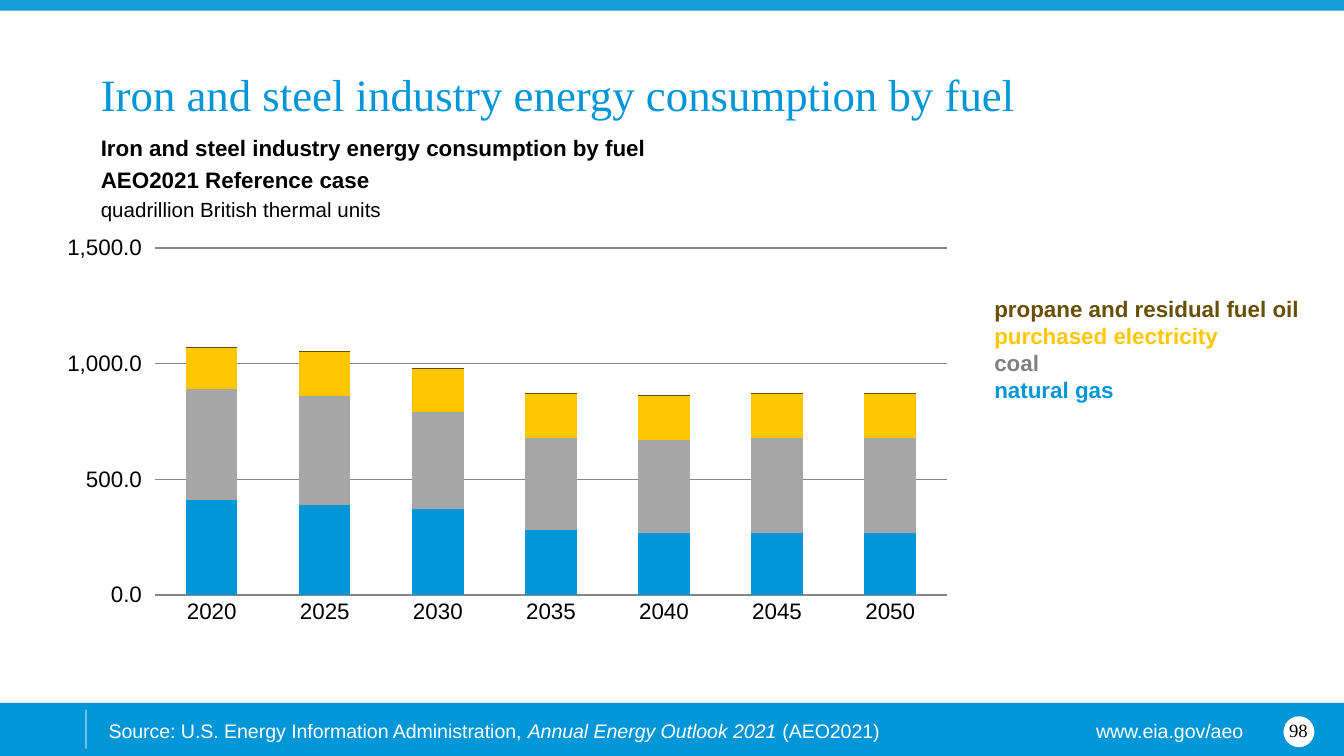
import pptx
import pptx.chart.data
import pptx.dml.color
import pptx.enum.chart
import pptx.enum.shapes
import pptx.enum.text
import pptx.oxml
import pptx.oxml.ns
import pptx.util
from pptx.util import Inches

BLUE, WHITE, BLACK = "0096D7", "FFFFFF", "000000"
GOLD, BROWN = "FFC702", "675005"
SANS, SERIF = "Arial", "Times New Roman"
ALIGN = pptx.enum.text.PP_ALIGN
ANCHOR = pptx.enum.text.MSO_ANCHOR
SHAPE = pptx.enum.shapes.MSO_SHAPE

YEARS = ["2020", "2025", "2030", "2035", "2040", "2045", "2050"]
SERIES = [
    ("Series 1", BLUE, [410, 390, 370, 280, 270, 270, 270]),
    ("Series 2", "BD732A", [0] * 7),
    ("Series 3", "A6A6A6", [480, 470, 420, 400, 400, 410, 410]),
    ("Series 4", GOLD, [180, 190, 190, 190, 190, 190, 190]),
    ("Series 5", BROWN, [3] * 7),
]


def rgb(color):
    return pptx.dml.color.RGBColor.from_string(color)


def set_font(font, size, color, name=SANS, bold=False, italic=False):
    font.size = pptx.util.Pt(size)
    font.name = name
    font.color.rgb = rgb(color)
    font.bold = bold
    font.italic = italic


def add_filled(slide, kind, left, top, width, height, color):
    shape = slide.shapes.add_shape(
        kind, Inches(left), Inches(top), Inches(width), Inches(height))
    shape.shadow.inherit = False
    shape.fill.solid()
    shape.fill.fore_color.rgb = rgb(color)
    shape.line.fill.background()


def add_text(slide, left, top, width, height, paragraphs, align=ALIGN.LEFT,
             anchor=ANCHOR.TOP, margins=None, space_before=0):
    """Each paragraph is a list of (text, font options) runs."""
    box = slide.shapes.add_textbox(
        Inches(left), Inches(top), Inches(width), Inches(height))
    frame = box.text_frame
    frame.word_wrap = True
    frame.vertical_anchor = anchor
    if margins:
        (frame.margin_left, frame.margin_top,
         frame.margin_right, frame.margin_bottom) = map(Inches, margins)
    for index, runs in enumerate(paragraphs):
        paragraph = frame.add_paragraph() if index else frame.paragraphs[0]
        paragraph.alignment = align
        if index and space_before:
            paragraph.space_before = pptx.util.Pt(space_before)
        for text, options in runs:
            run = paragraph.add_run()
            run.text = text
            set_font(run.font, **options)


def add_divider(slide, x, top, bottom, color, opacity):
    """Vertical line with the given opacity in percent."""
    line = slide.shapes.add_connector(
        pptx.enum.shapes.MSO_CONNECTOR.STRAIGHT,
        Inches(x), Inches(top), Inches(x), Inches(bottom))
    line.line.color.rgb = rgb(color)
    line.line.width = pptx.util.Pt(1)
    properties = line._element.spPr
    fill = properties.find(".//" + pptx.oxml.ns.qn("a:srgbClr"))
    alpha = pptx.oxml.parse_xml(
        f'<a:alpha {pptx.oxml.ns.nsdecls("a")} val="{opacity * 1000}"/>')
    fill.append(alpha)
    properties.append(pptx.oxml.parse_xml(
        f'<a:effectLst {pptx.oxml.ns.nsdecls("a")}/>'))


def set_plot_area(chart, **fractions):
    """Fix the inner plot area as fractions of the chart."""
    items = "".join(f'<c:{key} val="{value}"/>' for key, value in fractions.items())
    layout = pptx.oxml.parse_xml(
        f'<c:layout {pptx.oxml.ns.nsdecls("c")}><c:manualLayout>'
        '<c:layoutTarget val="inner"/><c:xMode val="edge"/><c:yMode val="edge"/>'
        f'{items}</c:manualLayout></c:layout>')
    plot_area = chart._chartSpace.chart.plotArea
    for old in plot_area.findall(pptx.oxml.ns.qn("c:layout")):
        plot_area.remove(old)
    plot_area.insert(0, layout)


def style_line(line, color="868686"):
    line.color.rgb = rgb(color)
    line.width = pptx.util.Pt(0.75)


def add_energy_chart(slide):
    data = pptx.chart.data.CategoryChartData(number_format="#,##0.0")
    data.categories = YEARS
    for name, _, values in SERIES:
        data.add_series(name, values)
    chart = slide.shapes.add_chart(
        pptx.enum.chart.XL_CHART_TYPE.COLUMN_STACKED,
        Inches(0.5), Inches(1.72), Inches(6.55), Inches(3.15), data).chart
    chart.has_legend = False
    chart.has_title = False
    set_font(chart.font, 14, BLACK)
    set_plot_area(chart, x=0.1, y=0.04, w=0.9, h=0.82)

    plot = chart.plots[0]
    plot.vary_by_categories = False
    plot.gap_width = 120
    plot.overlap = 100
    for series, (_, color, _) in zip(plot.series, SERIES):
        series.format.fill.solid()
        series.format.fill.fore_color.rgb = rgb(color)

    for axis in (chart.category_axis, chart.value_axis):
        axis.major_tick_mark = pptx.enum.chart.XL_TICK_MARK.NONE
        axis.minor_tick_mark = pptx.enum.chart.XL_TICK_MARK.NONE
        set_font(axis.tick_labels.font, 12, BLACK)
    style_line(chart.category_axis.format.line)

    value_axis = chart.value_axis
    value_axis.minimum_scale = 0
    value_axis.maximum_scale = 1500
    value_axis.major_unit = 500
    value_axis.tick_label_position = pptx.enum.chart.XL_TICK_LABEL_POSITION.LOW
    value_axis.tick_labels.number_format = "#,##0.0"
    value_axis.tick_labels.number_format_is_linked = False
    value_axis.format.line.fill.background()
    style_line(value_axis.major_gridlines.format.line)


def add_footer(slide):
    plain = dict(size=10.5, color=WHITE)
    add_filled(slide, SHAPE.RECTANGLE, 0, 5.23, 10, 0.4, BLUE)
    add_text(slide, 0.71, 5.3, 6.66, 0.28, [[
        ("Source: U.S. Energy Information Administration, ", plain),
        ("Annual Energy Outlook 2021", dict(plain, italic=True)),
        (" (AEO2021)", plain)]])
    add_text(slide, 7.73, 5.3, 1.62, 0.28,
             [[("www.eia.gov/aeo", plain)]], align=ALIGN.RIGHT)
    add_divider(slide, 0.64, 5.28, 5.57, WHITE, 40)
    add_filled(slide, SHAPE.OVAL, 9.55, 5.33, 0.23, 0.23, WHITE)
    add_text(slide, 9.45, 5.28, 0.42, 0.3,
             [[("98", dict(size=10, color=BLACK, name=SERIF))]],
             align=ALIGN.CENTER, anchor=ANCHOR.MIDDLE)


def main():
    presentation = pptx.Presentation()
    presentation.slide_width = Inches(10)
    presentation.slide_height = Inches(10 * 9 / 16)
    slide = presentation.slides.add_slide(presentation.slide_layouts[6])

    add_filled(slide, SHAPE.RECTANGLE, 0, 0, 10, 0.08, "169DD8")
    add_footer(slide)

    heading = "Iron and steel industry energy consumption by fuel"
    subtitle = dict(size=12, color=BLACK, bold=True)
    add_text(slide, 0.75, 1.2, 7.22, 0.45, [
        [(heading, subtitle)],
        [("AEO2021 Reference case", subtitle)],
        [("quadrillion British thermal units", dict(size=11, color=BLACK))],
    ], anchor=ANCHOR.BOTTOM, margins=(0, 0, 0.1, 0), space_before=2.4)
    add_text(slide, 0.75, 0.07, 8.75, 0.83,
             [[(heading, dict(size=24, color=BLUE, name=SERIF))]],
             anchor=ANCHOR.BOTTOM, margins=(0, 0, 0, 0))

    add_energy_chart(slide)
    fuels = [("propane and residual fuel oil", BROWN),
             ("purchased electricity", GOLD),
             ("coal", "808080"),
             ("natural gas", BLUE)]
    add_text(slide, 7.3, 2.15, 2.57, 0.91,
             [[(fuel, dict(size=12, color=color, bold=True))]
              for fuel, color in fuels])

    presentation.save("out.pptx")


if __name__ == "__main__":
    main()
